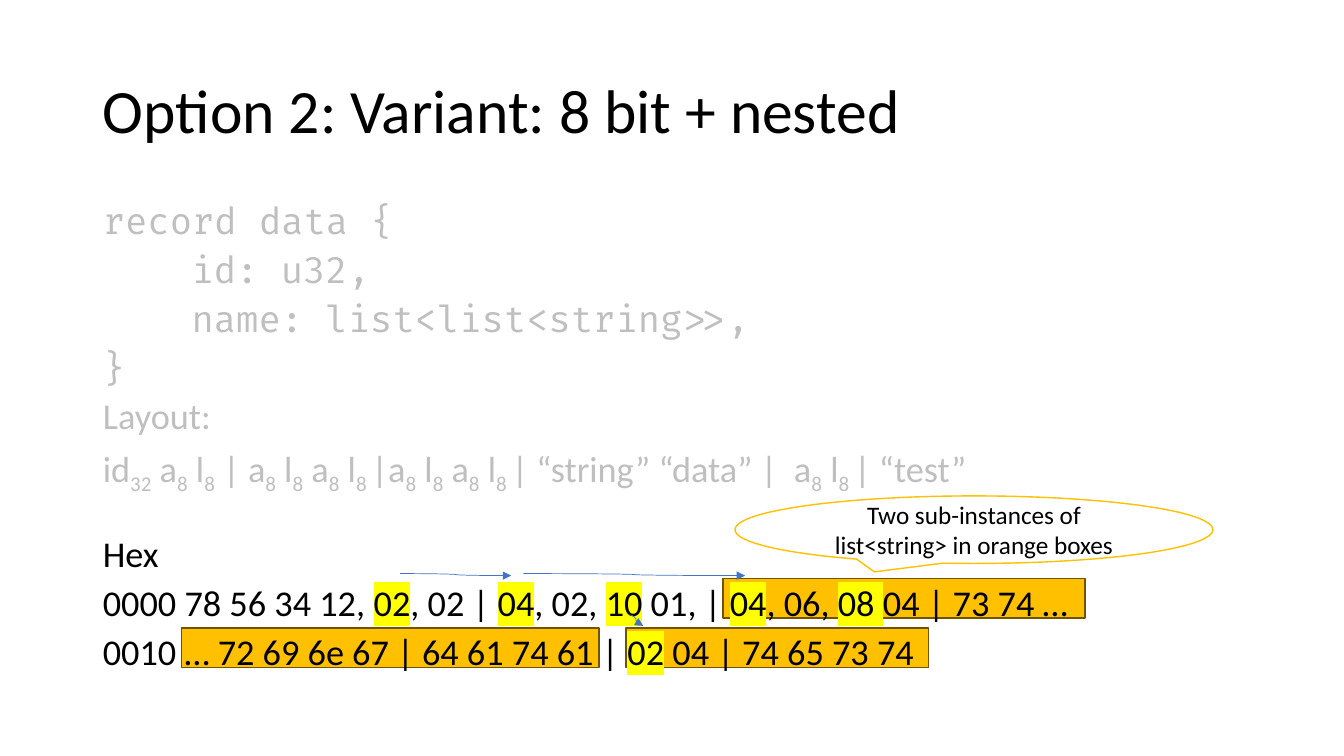
"""Builds the slide on the nested 8-bit variant of the record layout."""
from dataclasses import dataclass

from lxml import etree
from pptx import Presentation
from pptx.dml.color import RGBColor
from pptx.enum.shapes import MSO_CONNECTOR, MSO_SHAPE
from pptx.enum.text import MSO_ANCHOR, MSO_AUTO_SIZE, PP_ALIGN
from pptx.oxml.ns import qn
from pptx.util import Pt

PX = 9144
RECTANGLE = MSO_SHAPE.RECTANGLE
CALLOUT = MSO_SHAPE.OVAL_CALLOUT
CURVE = MSO_CONNECTOR.CURVE
MIDDLE, TOP = MSO_ANCHOR.MIDDLE, MSO_ANCHOR.TOP
LEFT, CENTER = PP_ALIGN.LEFT, PP_ALIGN.CENTER
NO_AUTOFIT = MSO_AUTO_SIZE.NONE

BLACK, GREY, WHITE = "000000", "BFBFBF", "FFFFFF"
ORANGE, BROWN, BLUE, YELLOW = "FFC000", "705400", "4472C4", "FFFF00"
SANS, MONO = "Calibri", "Fira Code"
BODY_SIZE = 25.9
CODE_INDENT = 88
MARK = "~"


@dataclass(frozen=True)
class Box:
    left: int
    top: int
    width: int
    height: int


@dataclass(frozen=True)
class Arrow:
    x1: int
    y1: int
    x2: int
    y2: int


@dataclass(frozen=True)
class Line:
    """A body line; pieces between marks are subscripts or highlighted."""
    text: str
    color: str = BLACK
    font: str = SANS
    indent: int = 0
    space_before: int = 10
    subscripts: bool = False


SUB_INSTANCES = [
    Box(180, 623, 414, 39),
    Box(621, 623, 300, 39),
    Box(717, 574, 359, 39),
]
OFFSET_ARROWS = [
    Arrow(397, 569, 507, 571),
    Arrow(519, 569, 739, 571),
    Arrow(624, 610, 638, 621),
]
BODY_LINES = [
    Line("record data {", GREY, MONO),
    Line("id: u32,", GREY, MONO, CODE_INDENT),
    Line("name: list<list<string>>,", GREY, MONO, CODE_INDENT),
    Line("}", GREY, MONO),
    Line("Layout:", GREY),
    Line("id~32~ a~8~ l~8~ | a~8~ l~8~ a~8~ l~8 ~|a~8~ l~8~ a~8~ l~8 ~"
         "| “string” “data” |  a~8~ l~8 ~| “test”", GREY, subscripts=True),
    Line("Hex", space_before=35),
    Line("0000 78 56 34 12, ~02~, 02 | ~04~, 02, ~10~ 01, | "
         "~04~, 06, ~08 ~04 | 73 74 …"),
    Line("0010 … 72 69 6e 67 | 64 61 74 61 | ~02~ 04 | 74 65 73 74"),
]


def rgb(color: str) -> RGBColor:
    """Turn a hex string into a colour."""
    return RGBColor.from_string(color)


def place(shape, box: Box) -> None:
    """Move and size a shape."""
    shape.left, shape.top = box.left * PX, box.top * PX
    shape.width, shape.height = box.width * PX, box.height * PX


def add_run(paragraph, text: str, size: float, color: str, font: str = SANS,
            subscript: bool = False, highlight: bool = False) -> None:
    """Add one formatted run."""
    run = paragraph.add_run()
    run.text = text
    run.font.size = Pt(size)
    run.font.color.rgb = rgb(color)
    properties = run.font._element
    if subscript:
        properties.set("baseline", "-25000")
    if highlight:
        marker = etree.SubElement(properties, qn("a:highlight"))
        etree.SubElement(marker, qn("a:srgbClr"), val=YELLOW)
    run.font.name = font


def add_line(paragraph, line: Line) -> None:
    """Write one body line, without a bullet."""
    paragraph.alignment = LEFT
    paragraph.line_spacing = 0.8
    paragraph.space_before = Pt(line.space_before)
    properties = paragraph._p.get_or_add_pPr()
    properties.set("marL", str(line.indent * PX))
    properties.set("indent", "0")
    etree.SubElement(properties, qn("a:buNone"))
    for index, piece in enumerate(line.text.split(MARK)):
        marked = index % 2 == 1
        if piece:
            add_run(paragraph, piece, BODY_SIZE, line.color, line.font,
                    subscript=marked and line.subscripts,
                    highlight=marked and not line.subscripts)


def add_outlined(slide, preset, box: Box, fill: str, outline: str):
    """Add a filled preset shape with a thin outline."""
    shape = slide.shapes.add_shape(preset, 0, 0, 0, 0)
    place(shape, box)
    shape.shadow.inherit = False
    shape.fill.solid()
    shape.fill.fore_color.rgb = rgb(fill)
    shape.line.color.rgb = rgb(outline)
    shape.line.width = Pt(1)
    return shape


def add_arrow(slide, arrow: Arrow) -> None:
    """Add a curved arrow from an offset to its target."""
    curve = slide.shapes.add_connector(
        CURVE, arrow.x1 * PX, arrow.y1 * PX, arrow.x2 * PX, arrow.y2 * PX)
    curve.line.color.rgb = rgb(BLUE)
    curve.line.width = Pt(0.5)
    etree.SubElement(curve.line._get_or_add_ln(), qn("a:tailEnd"), type="triangle")
    etree.SubElement(curve._element.spPr, qn("a:effectLst"))


def fill_body(body) -> None:
    """Write the record, its layout and its bytes."""
    place(body, Box(92, 200, 1150, 476))
    frame = body.text_frame
    frame.auto_size = NO_AUTOFIT
    frame.vertical_anchor = TOP
    for index, line in enumerate(BODY_LINES):
        add_line(frame.add_paragraph() if index else frame.paragraphs[0], line)


def fill_title(title) -> None:
    """Write the title."""
    place(title, Box(92, 40, 1150, 145))
    title.text_frame.auto_size = NO_AUTOFIT
    title.text_frame.vertical_anchor = MIDDLE
    heading = title.text_frame.paragraphs[0]
    heading.alignment = LEFT
    heading.line_spacing = 0.9
    add_run(heading, "Option 2: Variant: 8 bit + nested", 44, BLACK)


def main() -> None:
    """Build and save the slide."""
    deck = Presentation()
    deck.slide_width, deck.slide_height = 1333 * PX, 750 * PX
    slide = deck.slides.add_slide(deck.slide_layouts[1])
    title, body = slide.shapes.title, slide.placeholders[1]
    for box in SUB_INSTANCES:
        add_outlined(slide, RECTANGLE, box, ORANGE, BROWN)
    fill_body(body)
    fill_title(title)
    for placeholder in (body, title):
        slide.shapes._spTree.append(placeholder._element)
    for arrow in OFFSET_ARROWS:
        add_arrow(slide, arrow)
    callout = add_outlined(slide, CALLOUT, Box(729, 492, 474, 67), WHITE, ORANGE)
    callout.text_frame.word_wrap = True
    callout.text_frame.vertical_anchor = MIDDLE
    remark = callout.text_frame.paragraphs[0]
    remark.alignment = CENTER
    add_run(remark, "Two sub-instances of list<string> in orange boxes", 18, BLACK)
    deck.save("out.pptx")


if __name__ == "__main__":
    main()
